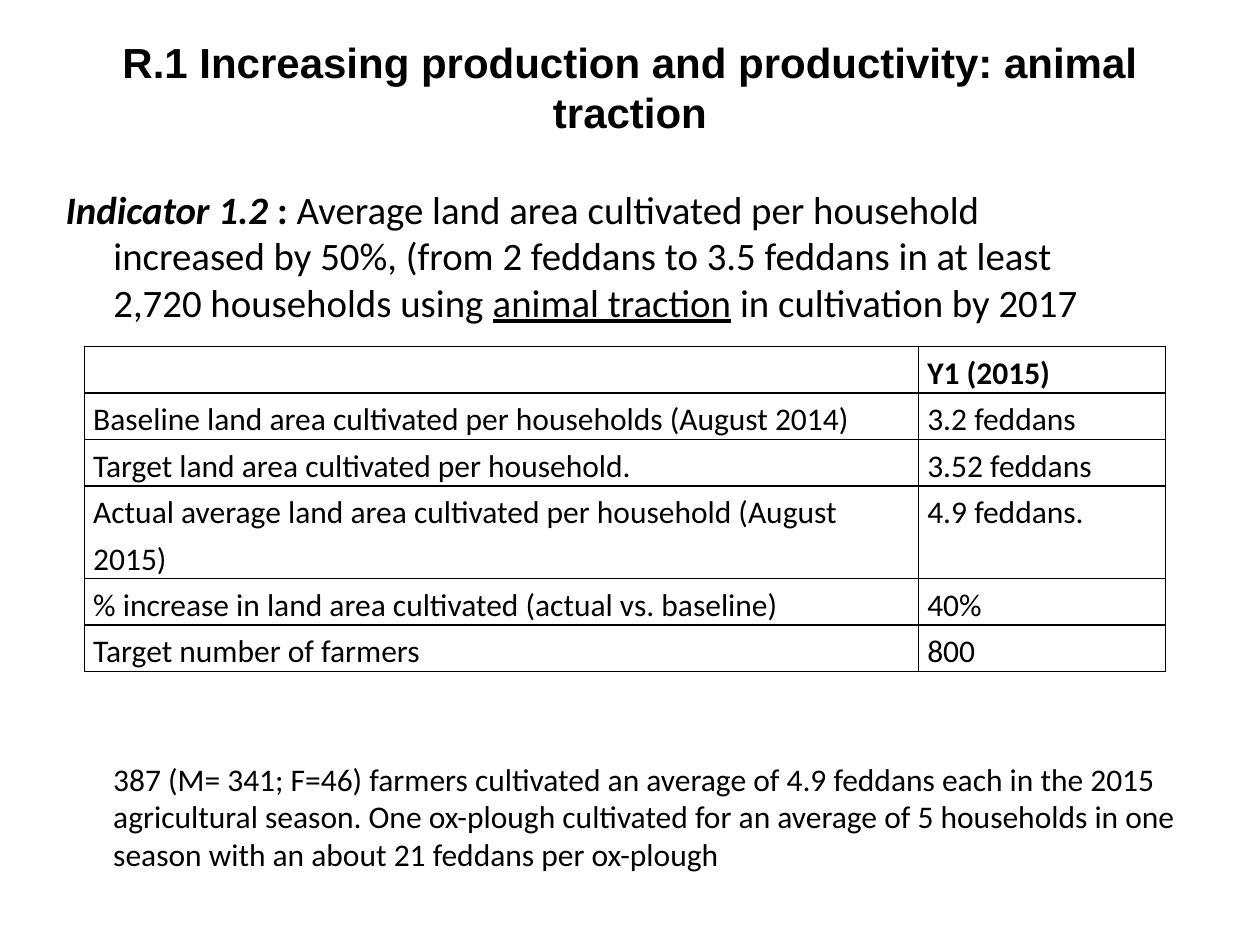
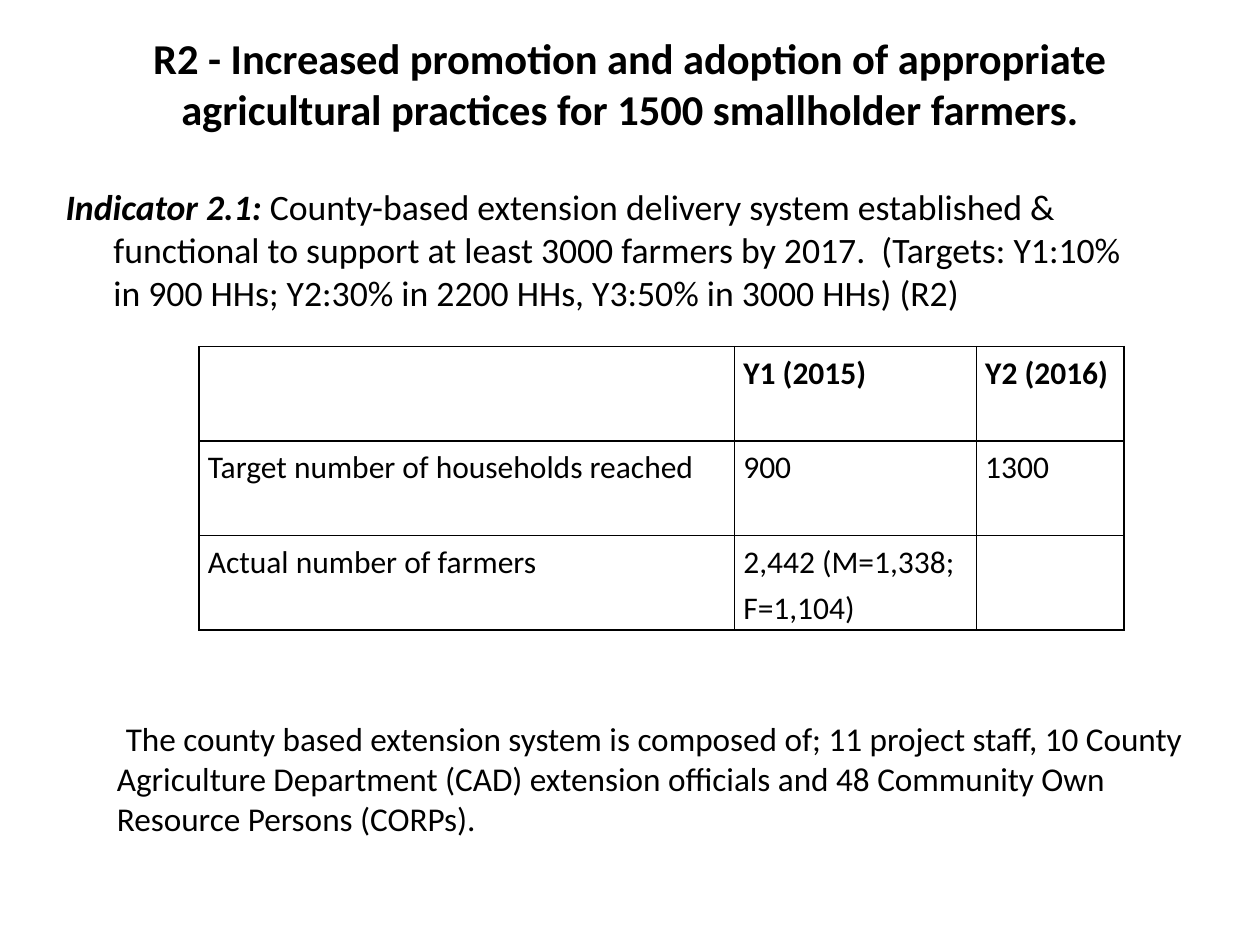
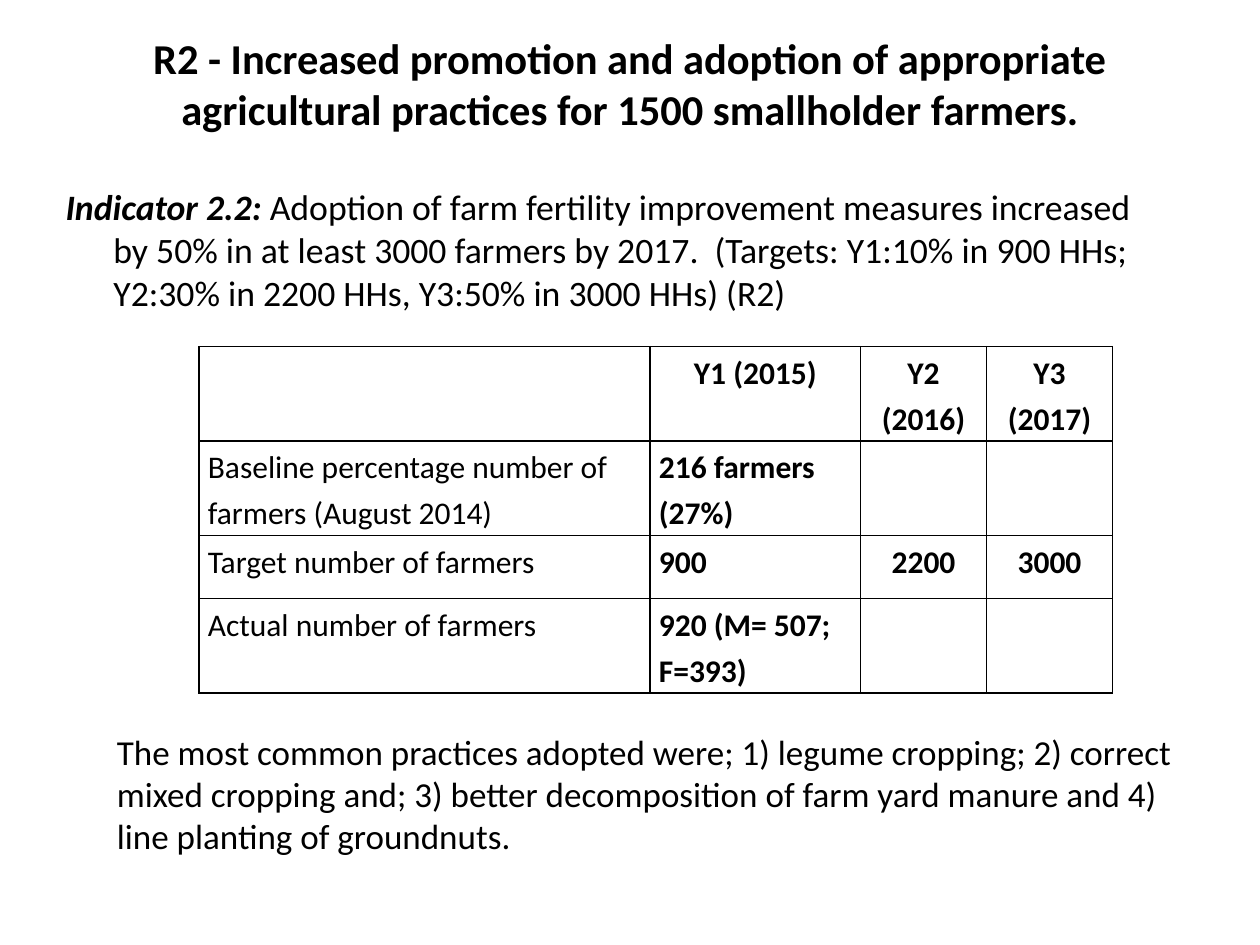
from lxml import etree
from pptx import Presentation
from pptx.dml.color import RGBColor
from pptx.enum import text as t
from pptx.oxml import ns
from pptx.util import Inches, Pt

BLACK = RGBColor(0, 0, 0)
WHITE = RGBColor(255, 255, 255)
BODY_FONT = "Calibri"
HANGING = Inches(0.38)
R2_TITLE = ("R2 - Increased promotion and adoption of appropriate "
            "agricultural practices for 1500 smallholder farmers.")
R2_TARGETS = "(Targets: Y1:10% in 900 HHs; Y2:30% in 2200 HHs, Y3:50% in 3000 HHs) (R2)"

RESULTS = [
    {
        "title": ("R.1 Increasing production and productivity: animal traction", "Arial", 24, 0.3),
        "indicator_size": 22.2,
        "indicator": [
            ("Indicator 1.2 ", "bi"),
            (":", "b"),
            (" Average land area cultivated per household increased by 50%, (from 2 feddans "
             "to 3.5 feddans in at least 2,720 households using ", ""),
            ("animal traction", "u"),
            (" in cultivation by 2017", ""),
        ],
        "table_left": 0.67,
        "columns": [6.62, 1.96],
        "rows": [0.37, 0.37, 0.37, 0.73, 0.37, 0.37],
        "cells": [
            ["", "Y1 (2015)"],
            ["Baseline land area cultivated per households (August 2014)", "3.2 feddans"],
            ["Target land area cultivated per household.", "3.52 feddans"],
            ["Actual average land area cultivated per household (August 2015)", "4.9 feddans."],
            ["% increase in land area cultivated (actual vs. baseline)", "40%"],
            ["Target number of farmers", "800"],
        ],
        "emphasis": False,
        "note": ("387 (M= 341; F=46) farmers cultivated an average of 4.9 feddans each in the 2015 "
                 "agricultural season. One ox-plough cultivated for an average of 5 households in "
                 "one season with an about 21 feddans per ox-plough"),
        "note_box": (0.8, 5.98, 8.79, 1.02),
        "note_size": 18,
        "note_indent": 0,
    },
    {
        "title": (R2_TITLE, BODY_FONT, 24.3, 0.27),
        "indicator_size": 20.4,
        "indicator": [
            ("Indicator 2.1: ", "bi"),
            ("County-based extension delivery system established & functional to support "
             "at least 3000 farmers by 2017.  " + R2_TARGETS, ""),
        ],
        "table_left": 1.58,
        "columns": [4.25, 1.92, 1.17],
        "rows": [0.75] * 3,
        "cells": [
            ["", "Y1 (2015)", "Y2 (2016)"],
            ["Target number of households reached", "900", "1300"],
            ["Actual number of farmers", "2,442 (M=1,338; F=1,104)", ""],
        ],
        "emphasis": False,
        "note": ("The county based extension system is composed of; 11 project staff, 10 County "
                 "Agriculture Department (CAD) extension officials and 48 Community Own "
                 "Resource Persons (CORPs)."),
        "note_box": (0.83, 5.65, 8.67, 1.43),
        "note_size": 19,
        "note_indent": 0.07,
    },
    {
        "title": (R2_TITLE, BODY_FONT, 24.3, 0.27),
        "indicator_size": 20.4,
        "indicator": [
            ("Indicator 2.2: ", "bi"),
            ("Adoption of farm fertility improvement measures increased by 50% in at least "
             "3000 farmers by 2017.  " + R2_TARGETS, ""),
        ],
        "table_left": 1.58,
        "columns": [3.58, 1.67, 1, 1],
        "rows": [0.75, 0.75, 0.5, 0.75],
        "cells": [
            ["", "Y1 (2015)", "Y2 (2016)", "Y3 (2017)"],
            ["Baseline percentage number of farmers (August 2014)", "216 farmers (27%)", "", ""],
            ["Target number of farmers", "900", "2200", "3000"],
            ["Actual number of farmers", "920 (M= 507; F=393)", "", ""],
        ],
        "emphasis": True,
        "note": ("The most common practices adopted were; 1) legume cropping; 2) correct mixed "
                 "cropping and; 3) better decomposition of farm yard manure and 4) line planting "
                 "of groundnuts."),
        "note_box": (0.83, 5.75, 8.67, 1.42),
        "note_size": 20,
        "note_indent": 0,
    },
]


def style(run, size, font=BODY_FONT, bold=False):
    run.font.name = font
    run.font.size = Pt(size)
    run.font.bold = bold
    run.font.color.rgb = BLACK


def outline(cell):
    properties = cell._tc.get_or_add_tcPr()
    for position, side in enumerate(("lnL", "lnR", "lnT", "lnB")):
        line = etree.Element(ns.qn("a:" + side), w=str(Pt(1)))
        fill = etree.SubElement(line, ns.qn("a:solidFill"))
        etree.SubElement(fill, ns.qn("a:srgbClr"), val=str(BLACK))
        properties.insert(position, line)


deck = Presentation()
deck.slide_width, deck.slide_height = Inches(10), Inches(7.5)

for result in RESULTS:
    slide = deck.slides.add_slide(deck.slide_layouts[1])

    heading, heading_font, heading_size, heading_top = result["title"]
    title = slide.shapes.title
    title.left, title.top = Inches(0.5), Inches(heading_top)
    title.width, title.height = Inches(9), Inches(0.78)
    title.text_frame.text = heading
    title.text_frame.auto_size = t.MSO_AUTO_SIZE.NONE
    title.text_frame.vertical_anchor = t.MSO_ANCHOR.MIDDLE
    title.text_frame.paragraphs[0].alignment = t.PP_ALIGN.CENTER
    style(title.text_frame.paragraphs[0].runs[0], heading_size, heading_font, True)

    indicator = slide.placeholders[1]
    indicator.left, indicator.top = Inches(0.42), Inches(1.42)
    indicator.width, indicator.height = Inches(8.67), Inches(1.17)
    indicator.text_frame.auto_size = t.MSO_AUTO_SIZE.NONE
    statement = indicator.text_frame.paragraphs[0]
    hanging = statement._p.get_or_add_pPr()
    hanging.set("marL", str(HANGING))
    hanging.set("indent", str(-HANGING))
    etree.SubElement(hanging, ns.qn("a:buNone"))
    statement.space_before = Pt(0)
    for words, marks in result["indicator"]:
        part = statement.add_run()
        part.text = words
        style(part, result["indicator_size"], bold="b" in marks)
        part.font.italic = "i" in marks
        part.font.underline = "u" in marks

    columns, rows = result["columns"], result["rows"]
    figures = slide.shapes.add_table(
        len(rows), len(columns), Inches(result["table_left"]), Inches(2.75),
        Inches(sum(columns)), Inches(sum(rows))).table
    figures.first_row = figures.horz_banding = False
    for column, width in zip(figures.columns, columns):
        column.width = Inches(width)
    for row, height in zip(figures.rows, rows):
        row.height = Inches(height)
    for r, values in enumerate(result["cells"]):
        for c, value in enumerate(values):
            cell = figures.cell(r, c)
            cell.margin_left = cell.margin_right = Inches(0.07)
            cell.margin_top = cell.margin_bottom = 0
            cell.fill.solid()
            cell.fill.fore_color.rgb = WHITE
            outline(cell)
            cell.text_frame.text = value
            entry = cell.text_frame.paragraphs[0]
            entry.line_spacing = 1.2
            if result["emphasis"] and (r == 0 or c > 1):
                entry.alignment = t.PP_ALIGN.CENTER
            for run in entry.runs:
                style(run, 18, bold=r == 0 or (result["emphasis"] and c > 0))

    note = slide.shapes.add_textbox(*map(Inches, result["note_box"])).text_frame
    note.word_wrap = True
    note.text = result["note"]
    if result["note_indent"]:
        note.paragraphs[0]._p.get_or_add_pPr().set("indent", str(Inches(result["note_indent"])))
    style(note.paragraphs[0].runs[0], result["note_size"])

deck.save("out.pptx")
